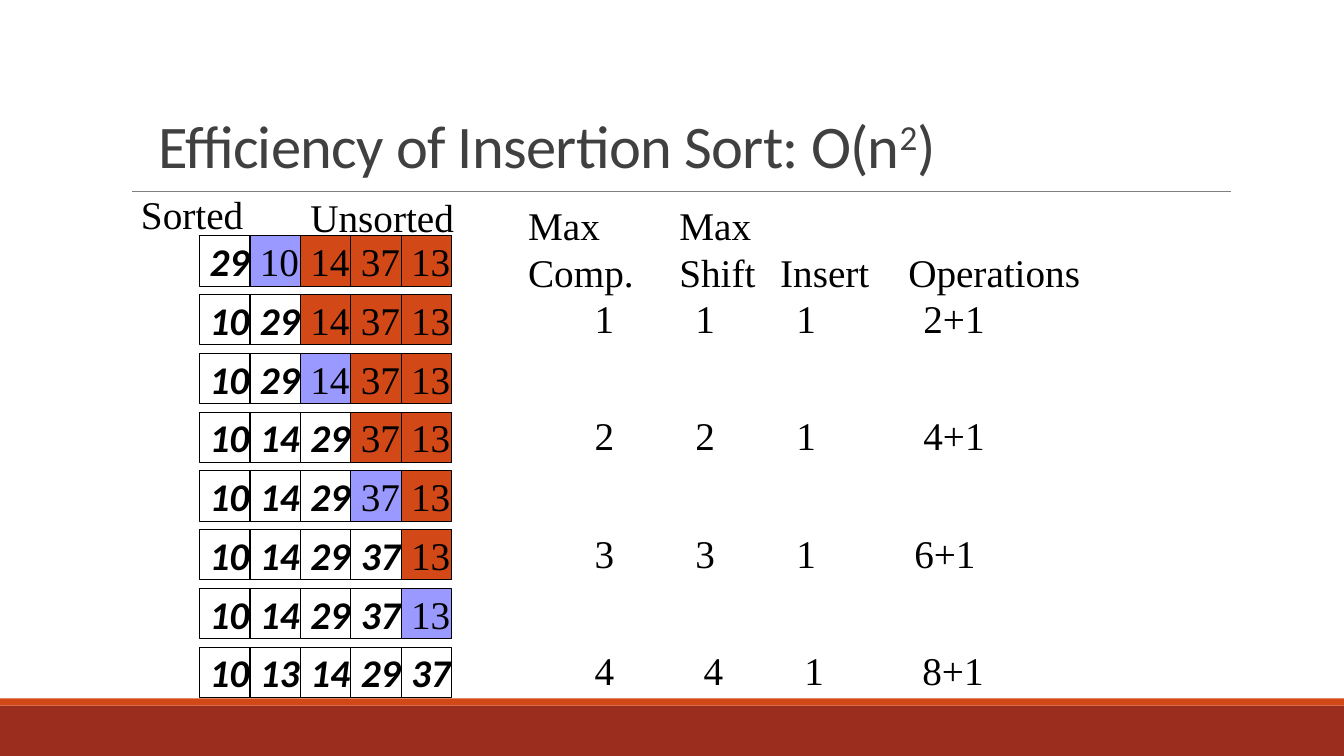
import dataclasses

import pptx
import pptx.dml.color
import pptx.enum.shapes
import pptx.enum.text
import pptx.oxml.ns
import pptx.util
import lxml.etree

TITLE = [("Efficiency of Insertion Sort: O(n", 0), ("2", 30000), (")", 0)]
STEPS = [
    ((29, 10, 14, 37, 13), 1, True),
    ((10, 29, 14, 37, 13), 2, False),
    ((10, 29, 14, 37, 13), 2, True),
    ((10, 14, 29, 37, 13), 3, False),
    ((10, 14, 29, 37, 13), 3, True),
    ((10, 14, 29, 37, 13), 4, False),
    ((10, 14, 29, 37, 13), 4, True),
    ((10, 13, 14, 29, 37), 5, False),
]
LABELS = [
    ("Sorted", (1.3, 1.84, 1.22, 0.57)),
    ("Unsorted", (2.98, 1.87, 1.63, 0.57)),
]
HEADS = "Max\tMax\nComp.\tShift\tInsert\tOperations"
COUNTS = [
    ("1\t1\t1\t2+1", (1, 2, 3.26)),
    ("2\t2\t1\t4+1", (1, 2, 3.26)),
    ("3\t3\t1\t6+1", (1, 2, 3.17)),
    ("4\t4\t1\t8+1", (1.08, 2.08, 3.25)),
]


@dataclasses.dataclass(frozen=True)
class Theme:
    ink: str = "000000"
    head: str = "404040"
    rule: str = "808080"
    done: str = "FFFFFF"
    next: str = "9999FF"
    rest: str = "D34817"
    foot: str = "9B2D1F"
    sans: str = "Calibri"
    serif: str = "Times New Roman"
    body: float = 28
    title: float = 43.2


theme = Theme()
WIDE, HIGH = 13.33, 7.5
LEFT, TOP, CELL = 1.98, 2.34, 0.5
PITCH = 4.08 / (len(STEPS) - 1)

deck = pptx.Presentation()
deck.slide_width = pptx.util.Inches(WIDE)
deck.slide_height = pptx.util.Inches(HIGH)
slide = deck.slides.add_slide(deck.slide_layouts[6])


def color(code):
    return pptx.dml.color.RGBColor.from_string(code)


def inches(box):
    return [pptx.util.Inches(size) for size in box]


def block(box, fill, line=None):
    shape = slide.shapes.add_shape(
        pptx.enum.shapes.MSO_SHAPE.RECTANGLE, *inches(box))
    shape.shadow.inherit = False
    shape.fill.solid()
    shape.fill.fore_color.rgb = color(fill)
    if line:
        shape.line.color.rgb = color(line)
        shape.line.width = pptx.util.Pt(0.75)
    else:
        shape.line.fill.background()
    return shape


def write(text, box=None, shape=None, font=theme.serif, size=theme.body,
          ink=theme.ink, strong=False, anchor="TOP", wrap=False,
          tabs=(), lead=None, track=None):
    shape = shape or slide.shapes.add_textbox(*inches(box))
    frame = shape.text_frame
    frame.word_wrap = wrap
    frame.vertical_anchor = getattr(pptx.enum.text.MSO_ANCHOR, anchor)
    lines = ([[(line, 0)] for line in text.split("\n")]
             if isinstance(text, str) else [text])
    for i, runs in enumerate(lines):
        para = frame.add_paragraph() if i else frame.paragraphs[0]
        para.alignment = pptx.enum.text.PP_ALIGN.LEFT
        if lead:
            para.line_spacing = lead
        if tabs:
            stops = lxml.etree.SubElement(
                para._p.get_or_add_pPr(), pptx.oxml.ns.qn("a:tabLst"))
            for stop in tabs:
                lxml.etree.SubElement(
                    stops, pptx.oxml.ns.qn("a:tab"),
                    pos=str(pptx.util.Inches(stop)), algn="l")
        for words, raised in runs:
            run = para.add_run()
            run.text = words
            run.font.name = font
            run.font.size = pptx.util.Pt(size)
            run.font.color.rgb = color(ink)
            run.font.bold = run.font.italic = strong
            props = run._r.get_or_add_rPr()
            if raised:
                props.set("baseline", str(raised))
            if track:
                props.set("spc", str(int(track * 100)))


block((0, 7, WIDE, 0.5), theme.foot)
block((0, 6.93, WIDE, 0.07), theme.rest)
rule = slide.shapes.add_connector(
    pptx.enum.shapes.MSO_CONNECTOR.STRAIGHT, *inches((1.31, 1.9, 12.21, 1.9)))
rule.line.color.rgb = color(theme.rule)
rule.line.width = pptx.util.Pt(0.5)
lxml.etree.SubElement(rule._element.spPr, pptx.oxml.ns.qn("a:effectLst"))

write(TITLE, (1.47, 0.59, 8.5, 1.25), font=theme.sans, size=theme.title,
      ink=theme.head, anchor="BOTTOM", wrap=True, lead=0.85, track=-0.5)

for row, (values, done, active) in enumerate(STEPS):
    for col, value in enumerate(values):
        ready = col < done
        fill = (theme.done if ready else
                theme.next if active and col == done else theme.rest)
        cell = block((LEFT + col * CELL, TOP + row * PITCH, CELL, CELL),
                     fill, theme.ink)
        write(str(value), shape=cell, strong=ready, anchor="MIDDLE",
              font=theme.sans if ready else theme.serif)

for text, box in LABELS:
    write(text, box)

write(HEADS, (5.14, 1.95, 5.73, 1.04), tabs=(1.5, 2.5, 3.77))
for row, (text, tabs) in enumerate(COUNTS):
    write(text, (5.8, TOP + 0.53 + 2 * row * PITCH, 4.1, 0.57), tabs=tabs)

deck.save("out.pptx")
